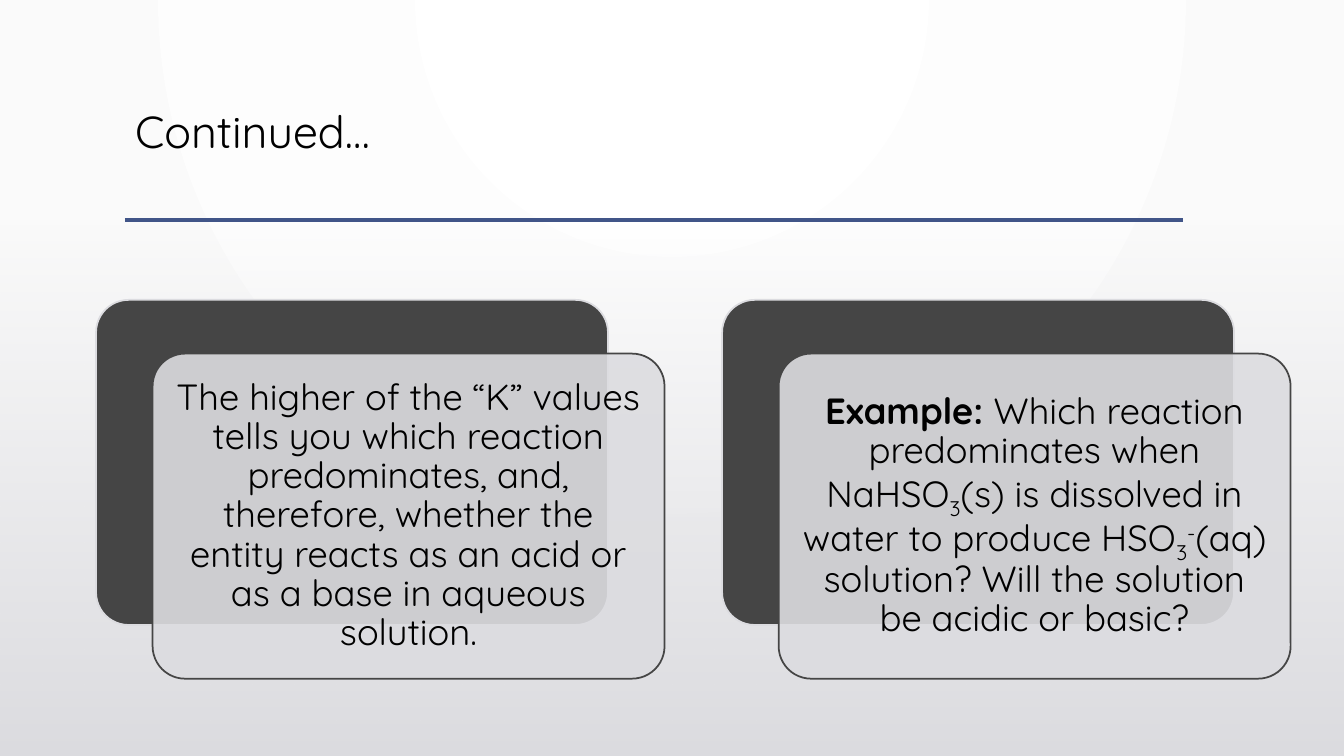
"""Build the slide that compares K values and poses an example reaction."""
from lxml.etree import SubElement
from pptx import Presentation
from pptx.dml.color import RGBColor
from pptx.enum.shapes import MSO_CONNECTOR, MSO_SHAPE
from pptx.enum.text import MSO_ANCHOR, PP_ALIGN
from pptx.oxml import parse_xml
from pptx.oxml.ns import nsdecls, qn
from pptx.util import Pt

TITLE = "Continued…"
CARDS = [
    [("The higher of the “K” values tells you which reaction predominates, and, "
      "therefore, whether the entity reacts as an acid or as a base in aqueous solution.", "")],
    [("Example: ", "bold"),
     ("Which reaction predominates when NaHSO", ""),
     ("3", "sub"),
     ("(s) is dissolved in water to produce HSO", ""),
     ("3", "sub"),
     ("-", "super"),
     ("(aq) solution? Will the solution be acidic or basic?", "")],
]
BASELINES = {"sub": "-25000", "super": "30000"}
FONT, BLACK, DARK, PALE, BLUE = "Quicksand", "000000", "454545", "DCDCE0", "415588"
WIDTH, HEIGHT = 960, 540
RULE_LEFT, RULE_RIGHT, RULE_Y = 89.28, 845.28, 157.2
CARD_LEFT, CARD_TOP, CARD_PITCH = 68.6, 214.2, 447.2
CARD_W, CARD_H = 365.7, 232.2
SHIFT_X, SHIFT_Y, MARGIN = 40.4, 38.4, 6.8
CIRCLE = '<a:path path="circle"><a:fillToRect l="43000" r="43000" b="100000"/></a:path>'
DOWNWARD = '<a:lin ang="5400000" scaled="0"/>'


def color(value):
    return RGBColor.from_string(value)


def add_panel(s, kind, left, top, width, height, fill=None, line=None, opacity=100):
    sp = s.shapes.add_shape(kind, Pt(left), Pt(top), Pt(width), Pt(height))
    sp.shadow.inherit = False
    if fill:
        sp.fill.solid()
        sp.fill.fore_color.rgb = color(fill)
        if opacity < 100:
            clr = sp.fill._xPr.find(qn("a:solidFill"))[0]
            SubElement(clr, qn("a:alpha")).set("val", str(opacity * 1000))
    if line:
        sp.line.color.rgb = color(line)
        sp.line.width = Pt(1.25)
    else:
        sp.line.fill.background()
    return sp


def add_gradient(s, top, first, last, first_alpha, direction):
    sp = add_panel(s, MSO_SHAPE.RECTANGLE, 0, top, WIDTH, HEIGHT - top)
    stops = "".join(
        f'<a:gs pos="{pos}"><a:srgbClr val="{value}"><a:alpha val="{alpha}"/></a:srgbClr></a:gs>'
        for pos, value, alpha in [(0, first, first_alpha), (100000, last, 100000)])
    grad = parse_xml(f'<a:gradFill {nsdecls("a")} rotWithShape="1">'
                     f'<a:gsLst>{stops}</a:gsLst>{direction}</a:gradFill>')
    sp._element.spPr.find(qn("a:prstGeom")).addnext(grad)
    return sp


def add_run(p, text, size, style=""):
    r = p.add_run()
    r.text = text
    r.font.name, r.font.size = FONT, Pt(size)
    r.font.bold = style == "bold"
    r.font.color.rgb = color(BLACK)
    if style in BASELINES:
        r._r.get_or_add_rPr().set("baseline", BASELINES[style])


def add_card(s, left, runs):
    kind = MSO_SHAPE.ROUNDED_RECTANGLE
    back = add_panel(s, kind, left, CARD_TOP, CARD_W, CARD_H, DARK, PALE)
    x, y = left + SHIFT_X, CARD_TOP + SHIFT_Y
    front = add_panel(s, kind, x, y, CARD_W, CARD_H, PALE, DARK, 90)
    for sp in (back, front):
        sp.adjustments[0] = 0.1
    box = s.shapes.add_textbox(Pt(x + MARGIN), Pt(y + MARGIN),
                               Pt(CARD_W - 2 * MARGIN), Pt(CARD_H - 2 * MARGIN))
    tf = box.text_frame
    tf.word_wrap = True
    tf.vertical_anchor = MSO_ANCHOR.MIDDLE
    tf.margin_left = tf.margin_right = tf.margin_top = tf.margin_bottom = Pt(7.8)
    p = tf.paragraphs[0]
    p.alignment, p.line_spacing = PP_ALIGN.CENTER, 0.9
    for text, style in runs:
        add_run(p, text, 26, style)


def main():
    prs = Presentation()
    prs.slide_width, prs.slide_height = Pt(WIDTH), Pt(HEIGHT)
    s = prs.slides.add_slide(prs.slide_layouts[5])

    glow = add_gradient(s, 0, "FFFFFF", "FAFAFA", 100000, CIRCLE)
    s.shapes._spTree.insert(2, glow._element)

    title = s.shapes.title
    title.left, title.top, title.width, title.height = Pt(RULE_LEFT), Pt(74.9), Pt(756), Pt(82.8)
    tf = title.text_frame
    tf.word_wrap = True
    tf.vertical_anchor = MSO_ANCHOR.TOP
    p = tf.paragraphs[0]
    p.alignment, p.line_spacing = PP_ALIGN.LEFT, 0.9
    add_run(p, TITLE, 32)

    rule = s.shapes.add_connector(MSO_CONNECTOR.STRAIGHT, Pt(RULE_LEFT), Pt(RULE_Y),
                                  Pt(RULE_RIGHT), Pt(RULE_Y))
    rule.line.color.rgb = color(BLUE)
    rule.line.width = Pt(2.5)
    SubElement(rule._element.spPr, qn("a:effectLst"))

    add_gradient(s, 159.1, PALE, PALE, 0, DOWNWARD)
    for i, runs in enumerate(CARDS):
        add_card(s, CARD_LEFT + i * CARD_PITCH, runs)

    prs.save("out.pptx")


if __name__ == "__main__":
    main()
